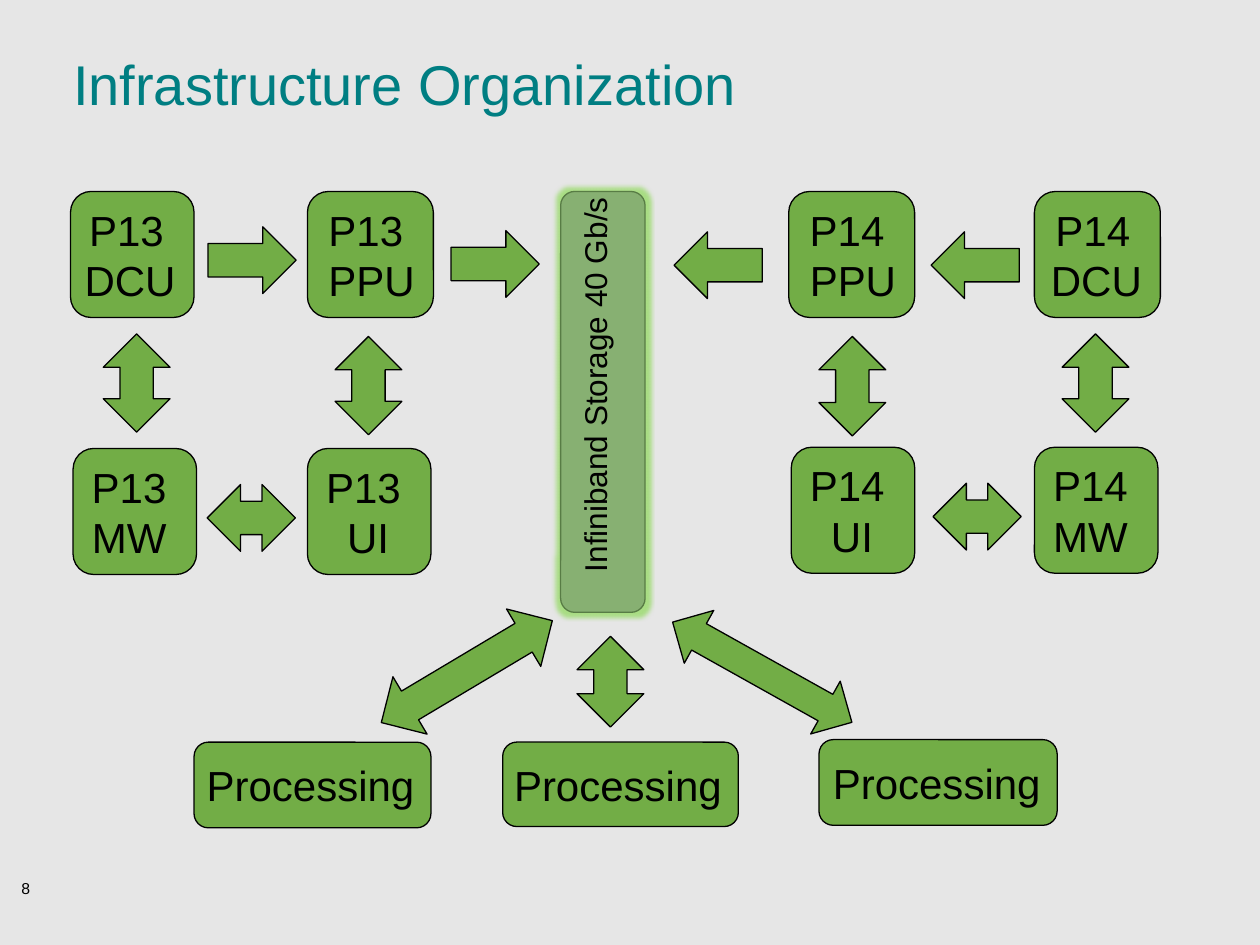
from dataclasses import dataclass

from lxml import etree
from pptx import Presentation
from pptx.dml.color import RGBColor
from pptx.enum.shapes import MSO_SHAPE
from pptx.enum.text import MSO_ANCHOR, PP_ALIGN
from pptx.oxml.ns import qn
from pptx.util import Inches, Pt

ROUNDED = MSO_SHAPE.ROUNDED_RECTANGLE
LEFT_ARROW = MSO_SHAPE.LEFT_ARROW
UP_DOWN_ARROW = MSO_SHAPE.UP_DOWN_ARROW
TOP, MIDDLE = MSO_ANCHOR.TOP, MSO_ANCHOR.MIDDLE
LEFT, RIGHT = PP_ALIGN.LEFT, PP_ALIGN.RIGHT

BACKGROUND = "E6E6E6"
GREEN = "72AD46"
BAR_GREEN = "87B072"
BAR_LINE = "587C45"
GLOW = "A9DD84"
TEAL = "007E82"
BLACK = "000000"
FONT = "Arial"


@dataclass
class Node:
    left: float
    top: float
    width: float
    height: float
    lines: tuple[str, ...]


@dataclass
class Arrow:
    kind: MSO_SHAPE
    left: float
    top: float
    width: float
    height: float
    rotation: float = 0


NODES = [
    # Upper row
    Node(0.56, 1.52, 0.98, 1, ("P13 ", "DCU")),
    Node(2.44, 1.52, 1, 1, ("P13 ", "PPU")),
    Node(6.26, 1.52, 1, 1, ("P14 ", "PPU")),
    Node(8.21, 1.52, 1, 1, ("P14 ", "DCU")),
    # Lower row
    Node(0.58, 3.56, 0.98, 1, ("P13 ", "MW ")),
    Node(2.44, 3.56, 0.98, 1, ("P13 ", "UI  ")),
    Node(6.28, 3.55, 0.98, 1, ("P14 ", "UI  ")),
    Node(8.21, 3.55, 0.98, 1, ("P14 ", "MW ")),
    # Processing row
    Node(1.54, 5.89, 1.88, 0.68, ("Processing",)),
    Node(3.99, 5.89, 1.87, 0.67, ("Processing",)),
    Node(6.5, 5.87, 1.89, 0.68, ("Processing",)),
]

ARROWS = [
    # Towards the storage bar
    Arrow(LEFT_ARROW, 1.65, 1.8, 0.7, 0.53, 180),
    Arrow(LEFT_ARROW, 3.58, 1.83, 0.7, 0.53, 180),
    Arrow(LEFT_ARROW, 5.35, 1.84, 0.7, 0.53),
    Arrow(LEFT_ARROW, 7.39, 1.84, 0.7, 0.53),
    # Between the upper and lower rows
    Arrow(UP_DOWN_ARROW, 0.82, 2.65, 0.53, 0.78),
    Arrow(UP_DOWN_ARROW, 2.66, 2.67, 0.53, 0.78),
    Arrow(UP_DOWN_ARROW, 6.5, 2.67, 0.53, 0.79),
    Arrow(UP_DOWN_ARROW, 8.43, 2.65, 0.53, 0.78),
    # Within the lower row
    Arrow(UP_DOWN_ARROW, 1.73, 3.76, 0.53, 0.7, 270),
    Arrow(UP_DOWN_ARROW, 7.49, 3.75, 0.53, 0.7, 270),
    # Between the storage bar and processing
    Arrow(UP_DOWN_ARROW, 3.44, 4.54, 0.53, 1.58, 59.2),
    Arrow(UP_DOWN_ARROW, 4.58, 5.05, 0.53, 0.72),
    Arrow(UP_DOWN_ARROW, 5.81, 4.52, 0.48, 1.63, 299.2),
]


def color(value: str) -> RGBColor:
    return RGBColor.from_string(value)


def inches(*values: float) -> list[int]:
    return [Inches(value) for value in values]


def write(shape, lines: tuple[str, ...], size: float, text_color: str = BLACK,
          alignment=LEFT, **frame_format) -> None:
    frame = shape.text_frame
    for name, value in frame_format.items():
        setattr(frame, name, value)
    for index, line in enumerate(lines):
        paragraph = frame.add_paragraph() if index else frame.paragraphs[0]
        paragraph.alignment = alignment
        run = paragraph.add_run()
        run.text = line
        run.font.color.rgb = color(text_color)
        for name, value in {"name": FONT, "size": Pt(size)}.items():
            setattr(run.font, name, value)


def add_filled(slide, kind, box: tuple[float, ...], fill: str = GREEN, line: str = BLACK):
    shape = slide.shapes.add_shape(kind, *inches(*box))
    shape.shadow.inherit = False
    shape.fill.solid()
    shape.fill.fore_color.rgb = color(fill)
    shape.line.color.rgb = color(line)
    shape.line.width = Pt(0.75)
    return shape


def add_node(slide, node: Node) -> None:
    shape = add_filled(slide, ROUNDED, (node.left, node.top, node.width, node.height))
    write(shape, node.lines, 24, alignment=RIGHT, vertical_anchor=MIDDLE, word_wrap=False)


def add_arrow(slide, arrow: Arrow) -> None:
    shape = add_filled(slide, arrow.kind, (arrow.left, arrow.top, arrow.width, arrow.height))
    shape.rotation = arrow.rotation


def add_glow(shape, glow_color: str, radius: float) -> None:
    effects = shape._element.spPr.find(qn("a:effectLst"))
    glow = etree.SubElement(effects, qn("a:glow"), rad=str(Pt(radius)))
    etree.SubElement(glow, qn("a:srgbClr"), val=glow_color)


def add_storage_bar(slide) -> None:
    bar = add_filled(slide, ROUNDED, (4.45, 1.52, 0.67, 3.34), BAR_GREEN, BAR_LINE)
    add_glow(bar, GLOW, 5)
    label = slide.shapes.add_textbox(*inches(4.52, 1.54, 0.5, 3.1))
    write(label, ("Infiniband Storage 40 Gb/s",), 18, word_wrap=False)
    label.text_frame._txBody.bodyPr.set("vert", "vert270")


def main() -> None:
    presentation = Presentation()
    presentation.slide_width, presentation.slide_height = inches(10, 7.5)
    slide = presentation.slides.add_slide(presentation.slide_layouts[5])
    slide.background.fill.solid()
    slide.background.fill.fore_color.rgb = color(BACKGROUND)
    no_margins = dict.fromkeys(
        ("margin_left", "margin_top", "margin_right", "margin_bottom"), 0)

    # Title and slide number
    title = slide.shapes.title
    title.left, title.top, title.width, title.height = inches(0.58, 0.33, 8.92, 0.83)
    write(title, ("Infrastructure Organization",), 32, TEAL, vertical_anchor=TOP,
          word_wrap=True, **{**no_margins, "margin_top": Inches(0.06)})
    number = slide.shapes.add_textbox(*inches(0.17, 6.97, 0.33, 0.25))
    write(number, ("8",), 9, word_wrap=True, **no_margins)

    # Storage, nodes and the flows between them
    add_storage_bar(slide)
    for node in NODES:
        add_node(slide, node)
    for arrow in ARROWS:
        add_arrow(slide, arrow)

    presentation.save("out.pptx")


if __name__ == "__main__":
    main()
